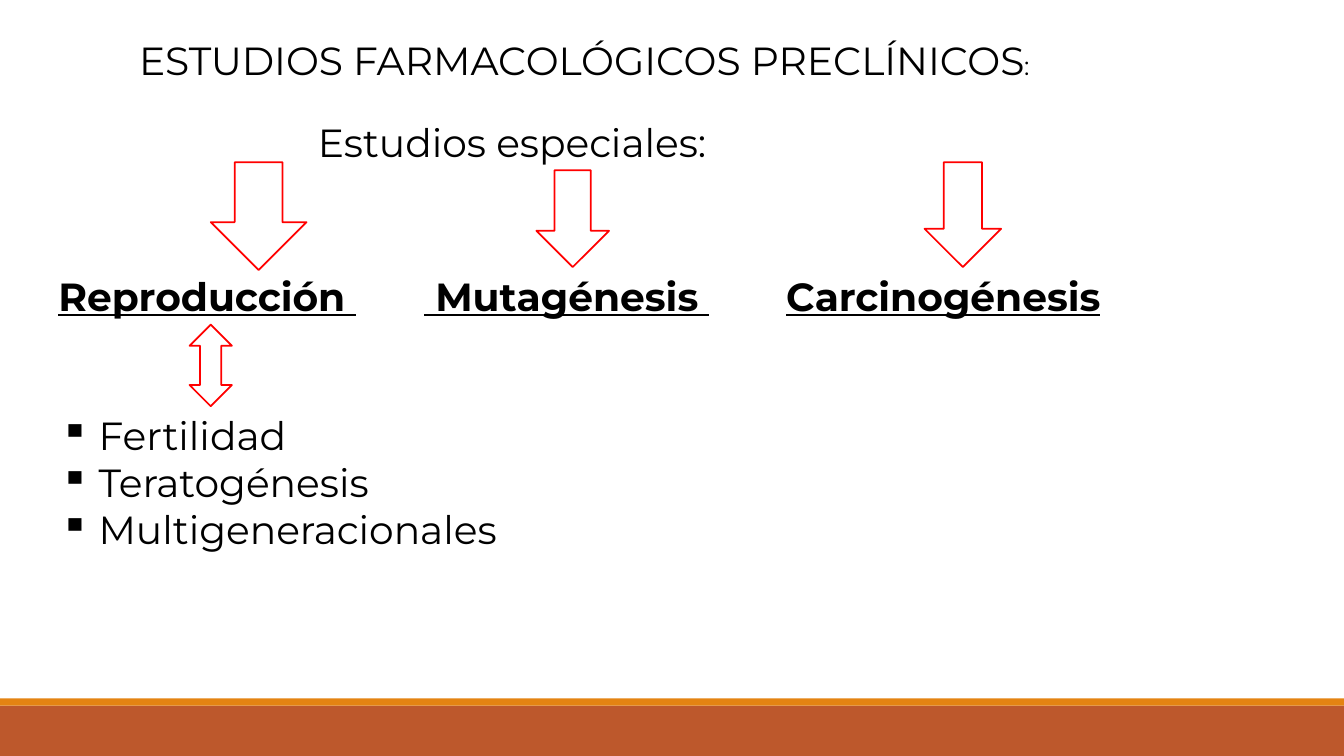
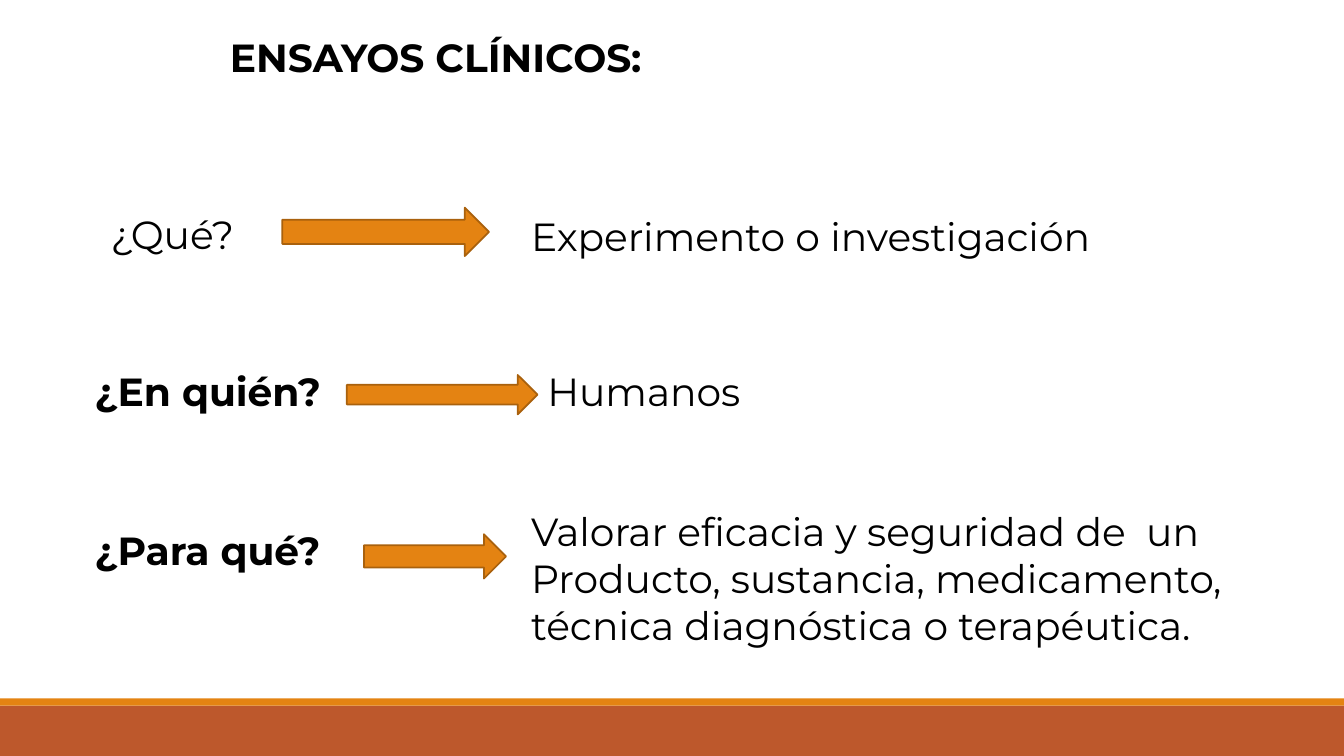
from lxml import etree
from pptx import Presentation
from pptx.dml.color import RGBColor
from pptx.enum.shapes import MSO_SHAPE
from pptx.enum.text import MSO_ANCHOR, MSO_AUTO_SIZE, PP_ALIGN
from pptx.oxml.ns import qn
from pptx.util import Inches, Pt

LEFT, CENTER = PP_ALIGN.LEFT, PP_ALIGN.CENTER
TOP, NO_FIT = MSO_ANCHOR.TOP, MSO_AUTO_SIZE.NONE
RECTANGLE, RIGHT_ARROW = MSO_SHAPE.RECTANGLE, MSO_SHAPE.RIGHT_ARROW
DOWN_ARROW, UP_DOWN_ARROW = MSO_SHAPE.DOWN_ARROW, MSO_SHAPE.UP_DOWN_ARROW

COLORS = {
    "text": "000000", "white": "FFFFFF", "red": "FF0000",
    "orange": "E48312", "dark orange": "A9610D", "rust": "BD582C",
}
FONT = "Montserrat"
LINE_HEIGHT = 0.57


def write(slide, text, left, top, width, height=LINE_HEIGHT, *, title=False,
          bold=False, underline=False, align=LEFT, bullet=None, small_end=""):
    """Write text, one paragraph a line, in the title or in a new text box."""
    place = [Inches(n) for n in (left, top, width, height)]
    if title:
        box = slide.shapes.title
        box.left, box.top, box.width, box.height = place
    else:
        box = slide.shapes.add_textbox(*place)
    frame = box.text_frame
    frame.word_wrap = True
    frame.auto_size = NO_FIT
    frame.vertical_anchor = TOP
    frame.text = text
    if small_end:
        frame.paragraphs[-1].add_run().text = small_end
    for paragraph in frame.paragraphs:
        paragraph.alignment = align
        for run in paragraph.runs:
            run.font.name = FONT
            run.font.size = Pt(18 if run.text == small_end else 28)
            run.font.bold = bold
            run.font.underline = underline
            run.font.color.rgb = RGBColor.from_string(COLORS["text"])
        if bullet:
            properties = paragraph._p.get_or_add_pPr()
            properties.set("marL", str(Inches(0.38)))
            properties.set("indent", str(-Inches(0.38)))
            etree.SubElement(properties, qn("a:buChar")).set("char", bullet)


def draw(slide, kind, left, top, width, height, fill, line=None):
    """Draw a flat preset shape, with an outline if a line colour is given."""
    shape = slide.shapes.add_shape(kind, *[Inches(n) for n in (left, top, width, height)])
    shape.shadow.inherit = False
    shape.fill.solid()
    shape.fill.fore_color.rgb = RGBColor.from_string(COLORS[fill])
    if line:
        shape.line.color.rgb = RGBColor.from_string(COLORS[line])
        shape.line.width = Pt(1.25)
    else:
        shape.line.fill.background()


prs = Presentation()
prs.slide_width, prs.slide_height = Inches(13.33), Inches(7.5)
title_only = prs.slide_layouts[5]
preclinical, clinical = [prs.slides.add_slide(title_only) for _ in range(2)]

# Footer bands on both slides
for slide in (preclinical, clinical):
    draw(slide, RECTANGLE, 0, 7, 13.33, 0.5, "rust")
    draw(slide, RECTANGLE, 0, 6.93, 13.33, 0.07, "orange")

# Slide 1: preclinical studies
write(preclinical, "ESTUDIOS FARMACOLÓGICOS PRECLÍNICOS", 0.5, 0.31, 10.59,
      title=True, align=CENTER, small_end=":")
write(preclinical, "Estudios especiales:", 1.2, 1.12, 7.76, align=CENTER)

# Kinds of special study, each under its arrow
special_studies = [
    ("Reproducción ", 0.48, (2.09, 1.61, 0.95, 1.07)),
    (" Mutagénesis ", 4.11, (5.32, 1.69, 0.72, 0.96)),
    ("Carcinogénesis", 7.7, (9.17, 1.61, 0.76, 1.04)),
]
for study, left, arrow in special_studies:
    write(preclinical, study, left, 2.65, 3.5, bold=True, underline=True)
    draw(preclinical, DOWN_ARROW, *arrow, "white", "red")

# Reproduction studies
draw(preclinical, UP_DOWN_ARROW, 1.88, 3.22, 0.42, 0.81, "white", "red")
write(preclinical, "Fertilidad\nTeratogénesis\nMultigeneracionales",
      0.5, 4.03, 5.14, 1.51, bullet="▪")

# Slide 2: clinical trials
write(clinical, "ENSAYOS CLÍNICOS:", 2.18, 0.28, 4.64, title=True, bold=True)

# Question, arrow and answer in each row
questions = [
    ("¿Qué?", False, (1, 2.04, 1.8), (2.8, 2.06, 2.05, 0.48),
     "Experimento o investigación", (5.17, 2.06, 6.26)),
    ("¿En quién?", True, (0.84, 3.59, 2.6), (3.44, 3.72, 1.89, 0.39),
     "Humanos", (5.33, 3.59, 3.62)),
    ("¿Para qué?", True, (0.84, 5.17, 2.6), (3.61, 5.3, 1.41, 0.44),
     "Valorar eficacia y seguridad de  un\nProducto, sustancia, medicamento,\n"
     "técnica diagnóstica o terapéutica.", (5.17, 4.98, 7.82, 1.51)),
]
for question, bold, question_place, arrow, answer, answer_place in questions:
    write(clinical, question, *question_place, bold=bold)
    draw(clinical, RIGHT_ARROW, *arrow, "orange", "dark orange")
    write(clinical, answer, *answer_place)

prs.save("out.pptx")
